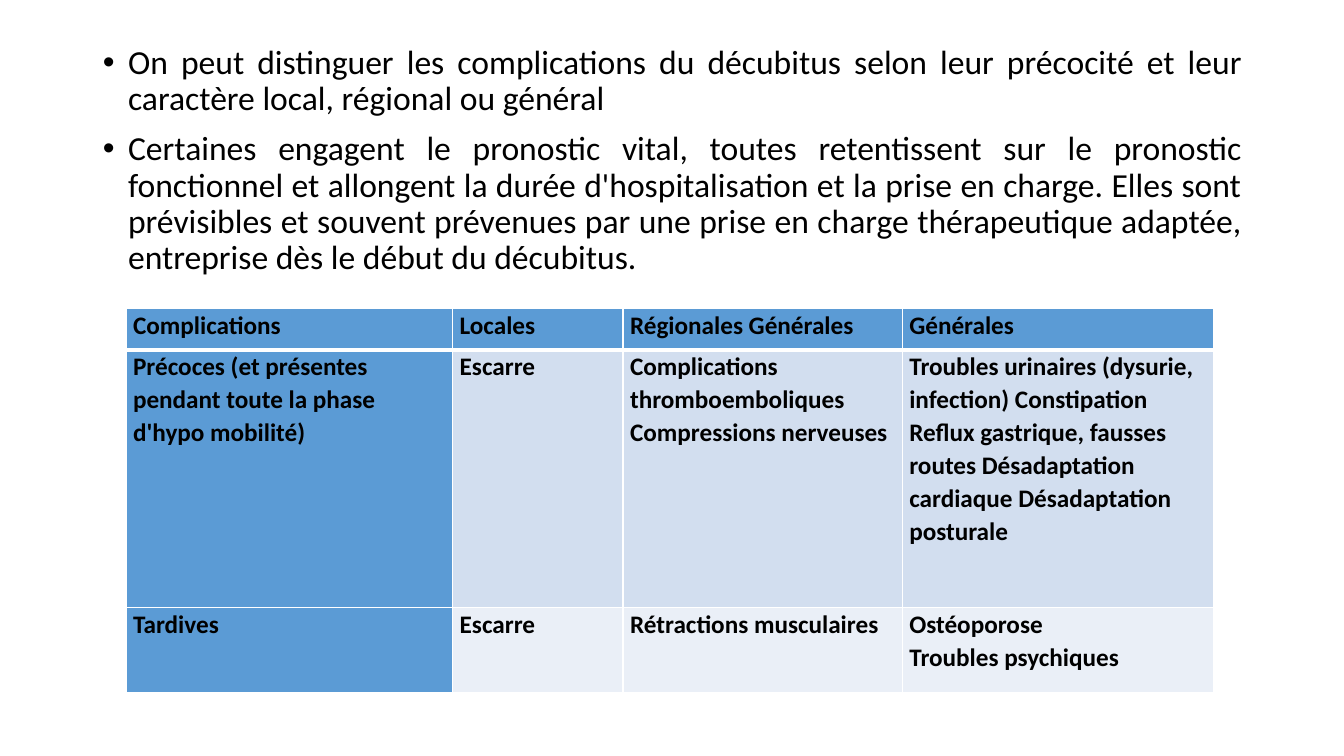
import lxml.etree
import pptx
import pptx.util
import pptx.dml.color
import pptx.enum.text
import pptx.oxml.ns

Inches, Pt = pptx.util.Inches, pptx.util.Pt
RGB = pptx.dml.color.RGBColor
qn = pptx.oxml.ns.qn
BLACK = RGB(0x00, 0x00, 0x00)
WHITE = RGB(0xFF, 0xFF, 0xFF)
BLUE = RGB(0x5B, 0x9B, 0xD5)
PALE = RGB(0xD2, 0xDE, 0xEF)
LIGHT = RGB(0xEA, 0xEF, 0xF7)


def style(para, size, bold, space):
    para.line_spacing = space
    font = para.font
    for key, val in {"name": "Calibri", "size": Pt(size), "bold": bold}.items():
        setattr(font, key, val)
    font.color.rgb = BLACK


def border(cell, side, width):
    line = lxml.etree.SubElement(cell._tc.get_or_add_tcPr(), qn("a:ln" + side), w=str(Pt(width)))
    fill = lxml.etree.SubElement(line, qn("a:solidFill"))
    lxml.etree.SubElement(fill, qn("a:srgbClr"), val=str(WHITE))


# Slide: the content layout without its title
deck = pptx.Presentation()
deck.slide_width, deck.slide_height = Inches(13.33), Inches(7.5)
slide = deck.slides.add_slide(deck.slide_layouts[1])
title = slide.shapes.title
title.element.getparent().remove(title.element)

# Bulleted text
points = [
    "On peut distinguer les complications du décubitus selon leur précocité et leur "
    "caractère local, régional ou général",
    "Certaines engagent le pronostic vital, toutes retentissent sur le pronostic "
    "fonctionnel et allongent la durée d'hospitalisation et la prise en charge. "
    "Elles sont prévisibles et souvent prévenues par une prise en charge "
    "thérapeutique adaptée, entreprise dès le début du décubitus.",
]
body = slide.placeholders[1]
place = {"left": 0.92, "top": 0.4, "width": 11.5, "height": 6.36}
for key, val in place.items():
    setattr(body, key, Inches(val))
frame = body.text_frame
frame.auto_size = pptx.enum.text.MSO_AUTO_SIZE.NONE
frame.vertical_anchor = pptx.enum.text.MSO_ANCHOR.TOP
frame.text = "\n".join(points)
for para in frame.paragraphs:
    style(para, 24, False, 0.9)
    para.alignment = pptx.enum.text.PP_ALIGN.JUSTIFY
    para.space_before = Pt(10)
    props = para._p.get_or_add_pPr()
    props.set("marL", str(Inches(0.25)))
    props.set("indent", str(Inches(-0.25)))
    lxml.etree.SubElement(props, qn("a:buFont"), typeface="Arial")
    lxml.etree.SubElement(props, qn("a:buChar"), char="•")
    props.append(props.find(qn("a:defRPr")))

# Table of complications
rows = [
    ["Complications", "Locales", "Régionales Générales", "Générales"],
    ["Précoces (et présentes pendant toute la phase d'hypo mobilité)", "Escarre",
     "Complications thromboemboliques Compressions nerveuses",
     "Troubles urinaires (dysurie, infection) Constipation Reflux gastrique, fausses "
     "routes Désadaptation cardiaque Désadaptation posturale"],
    ["Tardives", "Escarre", "Rétractions musculaires", "Ostéoporose\nTroubles psychiques"],
]
wide, high = [3.24, 1.69, 2.77, 3.09], [0.41, 2.56, 0.84]
tints = [BLUE, PALE, LIGHT]
table = slide.shapes.add_table(
    len(high), len(wide), Inches(1.25), Inches(3.06), Inches(sum(wide)), Inches(sum(high))
).table
table.horz_banding = False
for col, size in zip(table.columns, wide):
    col.width = Inches(size)
for row, size in zip(table.rows, high):
    row.height = Inches(size)

pads = {"margin_left": 0.07, "margin_right": 0.07, "margin_top": 0, "margin_bottom": 0}
for r, texts in enumerate(rows):
    for c, text in enumerate(texts):
        cell = table.cell(r, c)
        cell.text = text
        for key, val in pads.items():
            setattr(cell, key, Inches(val))
        for para in cell.text_frame.paragraphs:
            style(para, 18, True, 1.07)
            for run in para.runs:
                run.font.color.rgb = BLACK
        # The rule under the header is thicker
        for side in "LRTB":
            thick = (r, side) in [(0, "B"), (1, "T")]
            border(cell, side, 3 if thick else 1)
        cell.fill.solid()
        cell.fill.fore_color.rgb = BLUE if c == 0 else tints[r]

deck.save("out.pptx")
